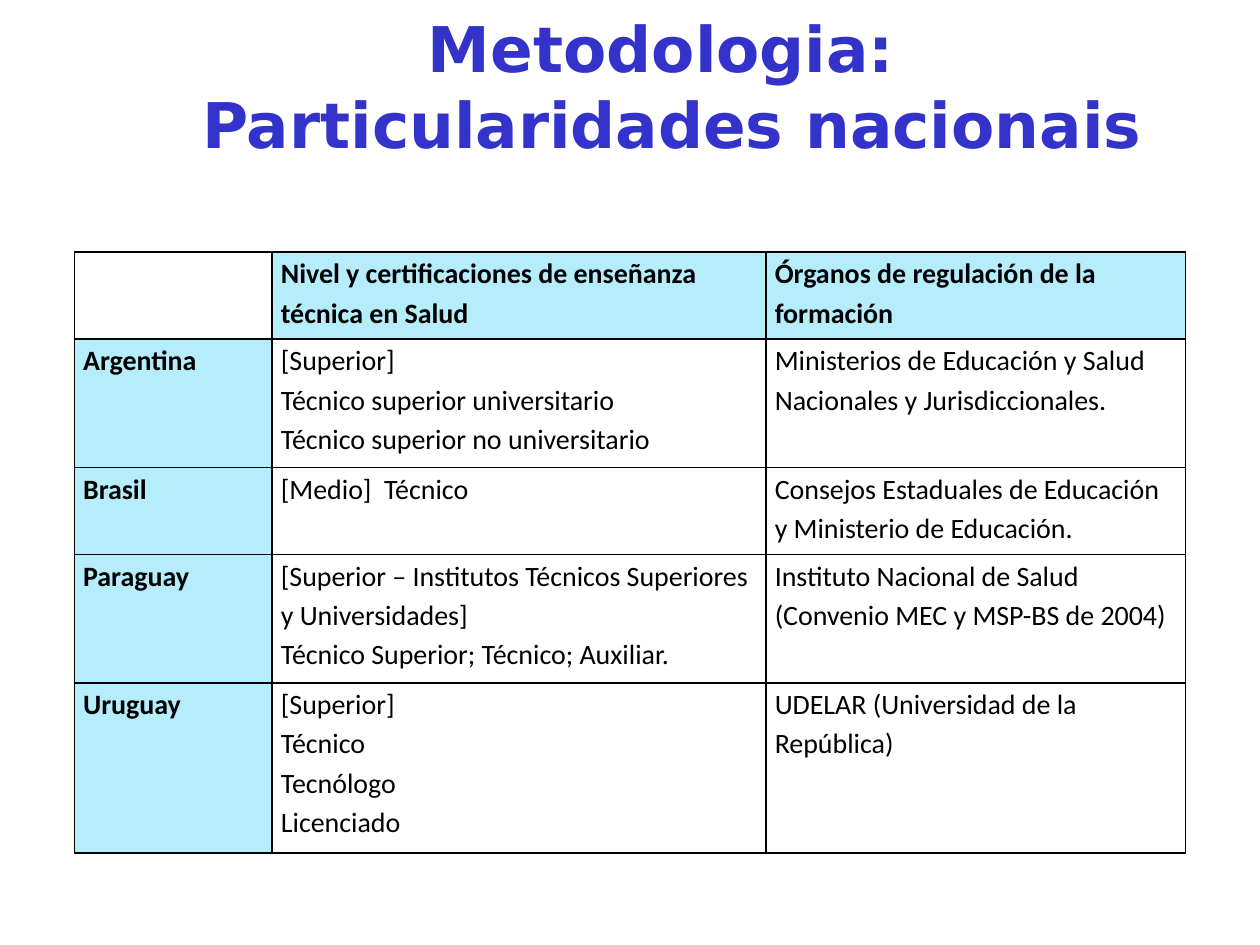
import pptx
import pptx.util
import pptx.dml.color
import pptx.enum.text
import pptx.oxml
import pptx.oxml.ns
from pptx.util import Inches

COLORS = {"title": "3333CC", "text": "000000", "head": "B5EDFD", "line": "000000"}

HEADS = ["", "Nivel y certificaciones de enseñanza técnica en Salud",
         "Órganos de regulación de la formación"]
ROWS = [
    ["Argentina",
     "[Superior]\nTécnico superior universitario\nTécnico superior no universitario",
     "Ministerios de Educación y Salud Nacionales y Jurisdiccionales."],
    ["Brasil", "[Medio]  Técnico",
     "Consejos Estaduales de Educación y Ministerio de Educación."],
    ["Paraguay",
     "[Superior – Institutos Técnicos Superiores y Universidades]\n"
     "Técnico Superior; Técnico; Auxiliar.",
     "Instituto Nacional de Salud\n(Convenio MEC y MSP-BS de 2004)"],
    ["Uruguay", "[Superior]\nTécnico\nTecnólogo\nLicenciado",
     "UDELAR (Universidad de la República)"],
]
WIDTHS = [1.57, 3.92, 3.33]
HEIGHTS = [0.69, 1.02, 0.69, 1.02, 1.35]


def color(name):
    return pptx.dml.color.RGBColor.from_string(COLORS[name])


def write(frame, text, font="Calibri", size=16, bold=False, tint="text",
          align=None, space=None):
    """Fill a text frame: one paragraph a line, all in one format."""
    frame.text = text
    for par in frame.paragraphs:
        par.alignment = align
        par.line_spacing = space
        for run in par.runs:
            run.font.name = font
            run.font.size = pptx.util.Pt(size)
            run.font.bold = bold
            run.font.color.rgb = color(tint)


class Deck:
    def __init__(self):
        self.show = pptx.Presentation()
        self.show.slide_width = Inches(10)
        self.show.slide_height = Inches(7.5)
        self.slide = self.show.slides.add_slide(self.show.slide_layouts[6])

    def title(self, text, left, top, width, height):
        box = self.slide.shapes.add_textbox(
            Inches(left), Inches(top), Inches(width), Inches(height))
        frame = box.text_frame
        frame.word_wrap = True
        frame.vertical_anchor = pptx.enum.text.MSO_ANCHOR.MIDDLE
        write(frame, text, font="DejaVu Sans", size=36, bold=True, tint="title",
              align=pptx.enum.text.PP_ALIGN.CENTER)

    def border(self, cell):
        props = cell._tc.get_or_add_tcPr()
        for spot, side in enumerate(("lnL", "lnR", "lnT", "lnB")):
            props.insert(spot, pptx.oxml.parse_xml(
                f'<a:{side} {pptx.oxml.ns.nsdecls("a")} w="12700"><a:solidFill>'
                f'<a:srgbClr val="{COLORS["line"]}"/></a:solidFill></a:{side}>'))

    def table(self, rows, left, top, widths, heights):
        grid = self.slide.shapes.add_table(
            len(rows), len(widths), Inches(left), Inches(top),
            Inches(sum(widths)), Inches(sum(heights))).table
        for col, width in zip(grid.columns, widths):
            col.width = Inches(width)
        for row, height in zip(grid.rows, heights):
            row.height = Inches(height)
        for r, texts in enumerate(rows):
            for c, text in enumerate(texts):
                cell = grid.cell(r, c)
                head = r == 0 or c == 0
                cell.margin_left = cell.margin_right = Inches(0.07)
                cell.margin_top = cell.margin_bottom = 0
                write(cell.text_frame, text, bold=head, space=1.15)
                # Only headings with text are shaded
                if head and text:
                    cell.fill.solid()
                    cell.fill.fore_color.rgb = color("head")
                else:
                    cell.fill.background()
                self.border(cell)


def main():
    deck = Deck()
    # Title on two lines
    deck.title("Metodologia: \vParticularidades nacionais", 1.17, 0.25, 8.33, 0.85)
    # Countries compared
    deck.table([HEADS] + ROWS, 0.59, 2, WIDTHS, HEIGHTS)
    deck.show.save("out.pptx")


if __name__ == "__main__":
    main()
